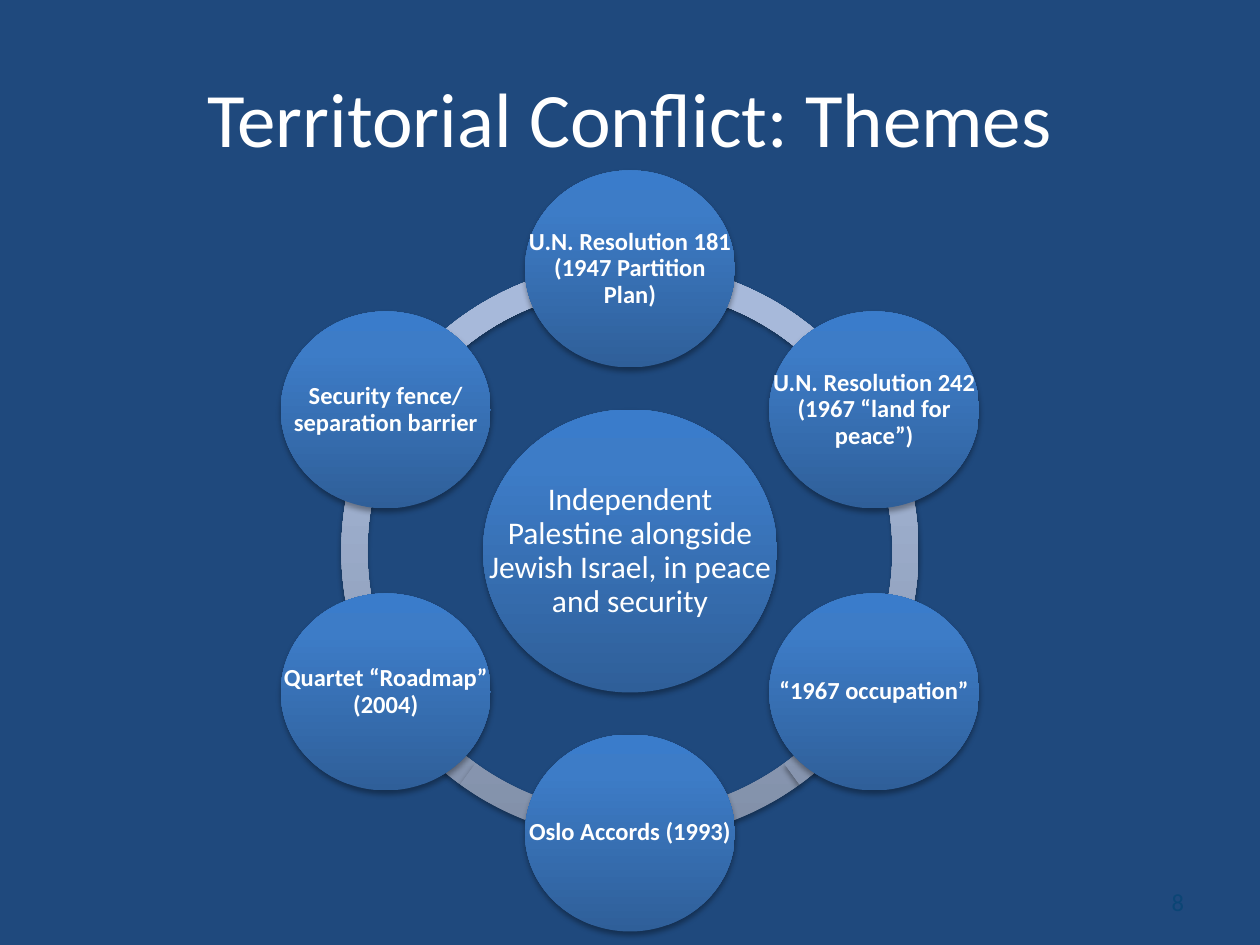
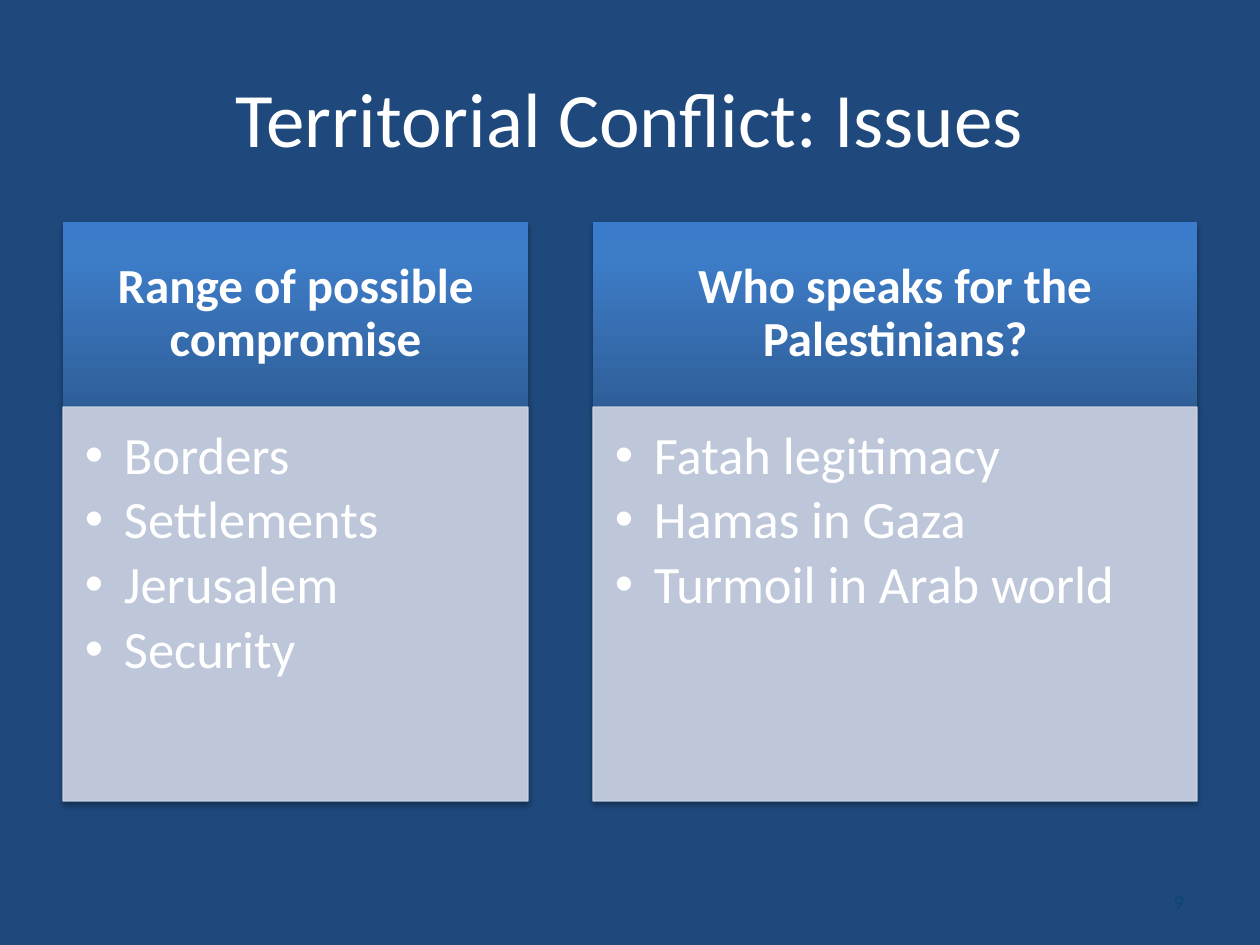
from math import cos, radians, sin

from lxml import etree
from pptx import Presentation
from pptx.dml.color import RGBColor
from pptx.enum.shapes import MSO_SHAPE
from pptx.enum.text import MSO_ANCHOR, MSO_AUTO_SIZE, PP_ALIGN
from pptx.oxml.ns import qn
from pptx.util import Pt

BLOCK_ARC, OVAL = MSO_SHAPE.BLOCK_ARC, MSO_SHAPE.OVAL
TOP, MIDDLE = MSO_ANCHOR.TOP, MSO_ANCHOR.MIDDLE
LEFT, CENTER, RIGHT = PP_ALIGN.LEFT, PP_ALIGN.CENTER, PP_ALIGN.RIGHT
NO_AUTOFIT = MSO_AUTO_SIZE.NONE

PX = 914400 / 126
NAVY, WHITE, CARD, NUMBER = "1F497D", "FFFFFF", "D0D8E8", "0B4575"
BLUE = [(0, "2F5F99"), (80, "3D7CC7"), (100, "3A7CCB")]
SILVER = [(0, "818FA8"), (80, "A7B9DA"), (100, "A7BADC")]


def paint(shape, stops=None):
    properties = shape._element.spPr
    if stops:
        shape.fill.gradient()
        shape.fill.gradient_angle = 90
        stop_list = properties.find(".//" + qn("a:gsLst"))
        for stop in list(stop_list):
            stop_list.remove(stop)
        for position, color in stops:
            stop = etree.SubElement(stop_list, qn("a:gs"), pos=str(position * 1000))
            etree.SubElement(stop, qn("a:srgbClr"), val=color)
        shape.line.fill.background()
    else:
        shape.line.width = Pt(0.75)
        for fill in (shape.fill, shape.line.fill):
            fill.solid()
            fill.fore_color.rgb = RGBColor.from_string(CARD)
        for color in properties.iter(qn("a:srgbClr")):
            etree.SubElement(color, qn("a:alpha"), val="90000")
    shape.shadow.inherit = False
    shadow = etree.SubElement(
        properties.find(qn("a:effectLst")), qn("a:outerShdw"),
        blurRad="40000", dist="23000", dir="5400000", rotWithShape="0",
    )
    color = etree.SubElement(shadow, qn("a:srgbClr"), val="000000")
    etree.SubElement(color, qn("a:alpha"), val="35000")


def write(box, lines, size, color=WHITE, bold=False, align=CENTER, anchor=MIDDLE,
          insets=(0, 0, 0, 0), spacing=0.9, after=0, indent=0):
    frame = box.text_frame
    sides = ("margin_left", "margin_top", "margin_right", "margin_bottom")
    frame_format = {side: round(inset * PX) for side, inset in zip(sides, insets)}
    frame_format |= {"word_wrap": True, "auto_size": NO_AUTOFIT, "vertical_anchor": anchor}
    for name, value in frame_format.items():
        setattr(frame, name, value)
    frame.text = "\n".join(lines)
    para_format = {"alignment": align, "line_spacing": spacing,
                   "space_before": Pt(0), "space_after": Pt(after)}
    font_format = {"name": "Calibri", "size": Pt(size), "bold": bold}
    for para in frame.paragraphs:
        for name, value in para_format.items():
            setattr(para, name, value)
        if indent:
            para._p.get_or_add_pPr().set("marL", str(round(indent * PX)))
            para._p.get_or_add_pPr().set("indent", str(round(-indent * PX)))
        span = para.runs[0]
        for name, value in font_format.items():
            setattr(span.font, name, value)
        span.font.color.rgb = RGBColor.from_string(color)


deck = Presentation()
deck.slide_width, deck.slide_height = round(1260 * PX), round(945 * PX)
background = deck.slide_master.background.fill
background.solid()
background.fore_color.rgb = RGBColor.from_string(NAVY)

pages = []
for title, layout, number, number_size in [
    ("Territorial Conflict: Themes", 5, "8", 14),
    ("Territorial Conflict: Issues", 4, "9", 12),
]:
    page = deck.slides.add_slide(deck.slide_layouts[layout])
    heading = page.shapes.title
    heading.left, heading.top, heading.width, heading.height = (
        round(length * PX) for length in (63, 38, 1134, 158))
    write(heading, [title], 44, spacing=1, insets=(13, 6, 13, 6))
    box = page.shapes.add_textbox(*(round(length * PX) for length in (1058, 877, 126, 50)))
    write(box, [number], number_size, NUMBER, align=RIGHT, spacing=1)
    pages.append(page)
themes, issues = pages

CENTER_X, CENTER_Y, ORBIT, RING = 630, 551, 282, 577
for start, end in [(126, 162), (90, 126), (54, 90), (18, 54), (198, 18), (162, 198)]:
    arc = themes.shapes.add_shape(BLOCK_ARC, *(
        round(length * PX)
        for length in (CENTER_X - RING / 2, CENTER_Y - RING / 2, RING, RING)))
    for index, value in enumerate((start * 0.6, end * 0.6, 0.045)):
        arc.adjustments[index] = value
    paint(arc, SILVER)

circles = [("Independent Palestine alongside Jewish Israel, in peace and security",
            CENTER_X, CENTER_Y, 294, 283, 18, False, 4)]
for index, label in enumerate([
    "U.N. Resolution 181 (1947 Partition Plan)",
    "U.N. Resolution 242 (1967 “land for peace”)",
    "“1967 occupation”",
    "Oslo Accords (1993)",
    "Quartet “Roadmap” (2004)",
    "Security fence/ separation barrier",
]):
    angle = radians(60 * index)
    circles.append((label, CENTER_X + ORBIT * sin(angle), CENTER_Y - ORBIT * cos(angle),
                    210, 197, 14, True, 3))

for label, x, y, width, height, size, bold, inset in circles:
    place = [round(length * PX) for length in (x - width / 2, y - height / 2, width, height)]
    paint(themes.shapes.add_shape(OVAL, *place), BLUE)
    write(themes.shapes.add_textbox(*place), [label], size, bold=bold, insets=[inset] * 4)

columns = [
    (63, 465, "Range of possible compromise",
     ["Borders", "Settlements", "Jerusalem", "Security"]),
    (593, 604, "Who speaks for the Palestinians?",
     ["Fatah legitimacy", "Hamas in Gaza", "Turmoil in Arab world"]),
]
for column, (left, width, topic, points) in enumerate(columns):
    header = issues.placeholders[1 + 2 * column]
    body = issues.placeholders[2 + 2 * column]
    for box, top, height in ((header, 222, 185), (body, 407, 394)):
        box.left, box.top, box.width, box.height = (
            round(length * PX) for length in (left, top, width, height))
    paint(header, BLUE)
    write(header, [topic], 28, bold=True, insets=(28, 15, 28, 15))
    paint(body)
    write(body, points, 30, align=LEFT, anchor=TOP, insets=(22, 22, 29, 33),
          after=4.5, indent=39)

deck.save("out.pptx")
